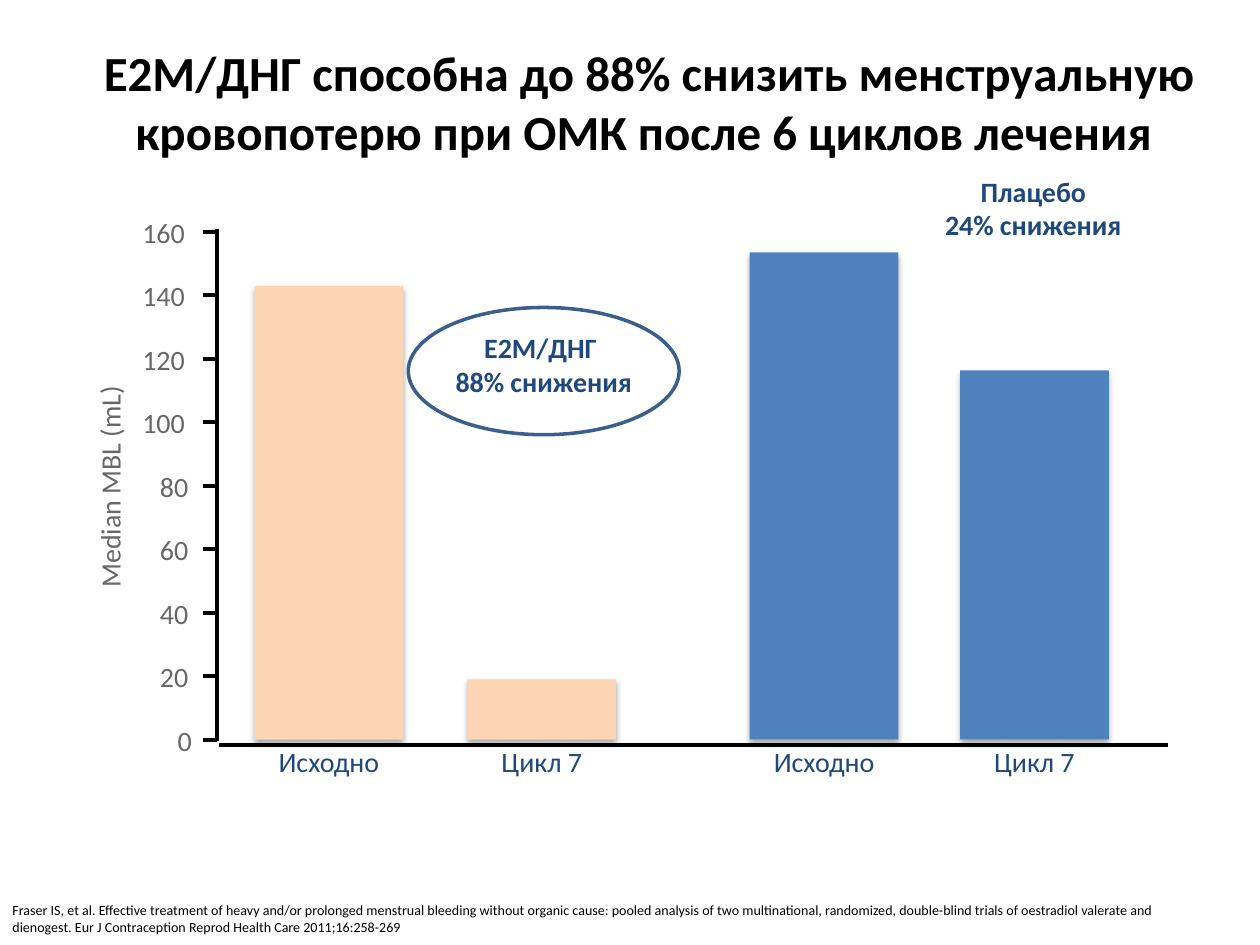
from collections import namedtuple

from lxml import etree
from pptx import Presentation
from pptx.dml.color import RGBColor
from pptx.enum import shapes, text
from pptx.oxml.ns import qn
from pptx.util import Inches, Pt

BLACK = RGBColor(0x00, 0x00, 0x00)
GREY = RGBColor(0x67, 0x67, 0x67)
NAVY = RGBColor(0x1F, 0x49, 0x7D)
PEACH = RGBColor(0xFC, 0xD5, 0xB5)
BLUE = RGBColor(0x4F, 0x81, 0xBD)
OUTLINE = RGBColor(0x3A, 0x5F, 0x8C)

Box = namedtuple("Box", "left top width height")

AXIS_MAX, AXIS_STEP = 160, 20
BAR_WIDTH = 1.18
LABEL_HEIGHT = 0.27
# Label, value, bar offset from the axis, colour
BARS = [
    ("Исходно", 143, 0.3, PEACH),
    ("Цикл 7", 19, 1.99, PEACH),
    ("Исходно", 153.5, 4.23, BLUE),
    ("Цикл 7", 116.3, 5.9, BLUE),
]
# Left edge of an axis label relative to the axis, by number of digits
TICK_LABEL_OFFSETS = {1: -0.31, 2: -0.45, 3: -0.59}


def add_text(page, box, lines, size, colour, bold=False, align=text.PP_ALIGN.CENTER,
             anchor=text.MSO_ANCHOR.TOP, inset=None, wrap=True):
    shape = page.shapes.add_textbox(*map(Inches, box))
    frame = shape.text_frame
    frame.word_wrap = wrap
    frame.vertical_anchor = anchor
    if inset is not None:
        frame.margin_left = frame.margin_right = Inches(inset)
        frame.margin_top = frame.margin_bottom = Inches(inset)
    for index, line in enumerate(lines):
        para = frame.paragraphs[0] if index == 0 else frame.add_paragraph()
        para.text = line
        para.alignment = align
        para.font.name = "Calibri"
        para.font.size = Pt(size)
        para.font.bold = bold
        para.font.color.rgb = colour
    return shape


def add_line(page, x1, y1, x2, y2):
    line = page.shapes.add_connector(
        shapes.MSO_CONNECTOR.STRAIGHT, *map(Inches, (x1, y1, x2, y2)))
    line.line.color.rgb = BLACK
    line.line.width = Pt(2.25)
    etree.SubElement(line._element.spPr, qn("a:effectLst"))


def add_soft_shadow(shape):
    shape.shadow.inherit = False
    effects = shape._element.spPr.find(qn("a:effectLst"))
    shadow = etree.SubElement(
        effects, qn("a:outerShdw"), blurRad=str(Pt(3.5)), dist=str(Pt(2.2)),
        dir="5400000", rotWithShape="0")
    colour = etree.SubElement(shadow, qn("a:srgbClr"), val="000000")
    etree.SubElement(colour, qn("a:alpha"), val="32000")


def add_bars(page, plot):
    bottom = plot.top + plot.height
    for label, value, offset, colour in BARS:
        left = plot.left + offset
        height = plot.height * value / AXIS_MAX
        bar = page.shapes.add_shape(
            shapes.MSO_SHAPE.RECTANGLE, Inches(left), Inches(bottom - height),
            Inches(BAR_WIDTH), Inches(height))
        bar.fill.solid()
        bar.fill.fore_color.rgb = colour
        bar.line.fill.background()
        add_soft_shadow(bar)
        add_text(page, Box(left, bottom + 0.04, BAR_WIDTH, LABEL_HEIGHT),
                 [label], 16, NAVY, inset=0)


def add_axes(page, plot):
    bottom = plot.top + plot.height
    add_line(page, plot.left, plot.top - 0.02, plot.left, bottom + 0.01)
    add_line(page, plot.left + 0.02, bottom + 0.04, plot.left + plot.width, bottom + 0.04)

    # Ticks and their values
    for value in range(0, AXIS_MAX + 1, AXIS_STEP):
        y = bottom - plot.height * value / AXIS_MAX
        add_line(page, plot.left - 0.11, y, plot.left, y)
        digits = len(str(value))
        add_text(page, Box(plot.left + TICK_LABEL_OFFSETS[digits], y - 0.13,
                           0.12 * digits, LABEL_HEIGHT),
                 [str(value)], 16, GREY, align=text.PP_ALIGN.LEFT, inset=0, wrap=False)

    # Axis title, turned about its centre
    length = 4.16
    title = add_text(page, Box(plot.left - 0.85 - length / 2, plot.top + 1.89,
                               length, LABEL_HEIGHT),
                     ["Median MBL (mL)"], 16, GREY, inset=0)
    title.rotation = 270


def add_callouts(page, plot):
    left, top = plot.left, plot.top
    for box, lines in [
        (Box(left + 1.52, top + 0.73, 2.15, 0.64), ["Е2М/ДНГ ", "88% снижения"]),
        (Box(left + 5.42, top - 0.51, 2.12, 0.64), ["Плацебо", "24% снижения"]),
    ]:
        add_text(page, box, lines, 16, NAVY, bold=True, anchor=text.MSO_ANCHOR.MIDDLE)

    ring = page.shapes.add_shape(
        shapes.MSO_SHAPE.OVAL, Inches(left + 1.52), Inches(top + 0.6),
        Inches(2.15), Inches(1.01))
    ring.shadow.inherit = False
    ring.fill.background()
    ring.line.color.rgb = OUTLINE
    ring.line.width = Pt(2)


def main():
    deck = Presentation()
    deck.slide_width, deck.slide_height = Inches(10), Inches(7.5)
    page = deck.slides.add_slide(deck.slide_layouts[6])

    # Title
    add_text(page, Box(0.5, 0.29, 9.3, 1.03),
             ["Е2М/ДНГ способна до 88% снизить менструальную кровопотерю "
              "при ОМК после 6 циклов лечения "],
             28, BLACK, bold=True, anchor=text.MSO_ANCHOR.MIDDLE)

    # Bar diagram
    plot = Box(1.72, 1.84, 7.55, 4.03)
    add_bars(page, plot)
    add_axes(page, plot)
    add_callouts(page, plot)

    # Reference
    add_text(page, Box(0, 7.11, 9.45, 0.37),
             ["Fraser IS, et al. Effective treatment of heavy and/or prolonged menstrual "
              "bleeding without organic cause: pooled analysis of two multinational, "
              "randomized, double-blind trials of oestradiol valerate and dienogest. "
              "Eur J Contraception Reprod Health Care 2011;16:258-269"],
             8, BLACK, align=text.PP_ALIGN.LEFT)

    deck.save("out.pptx")


if __name__ == "__main__":
    main()
